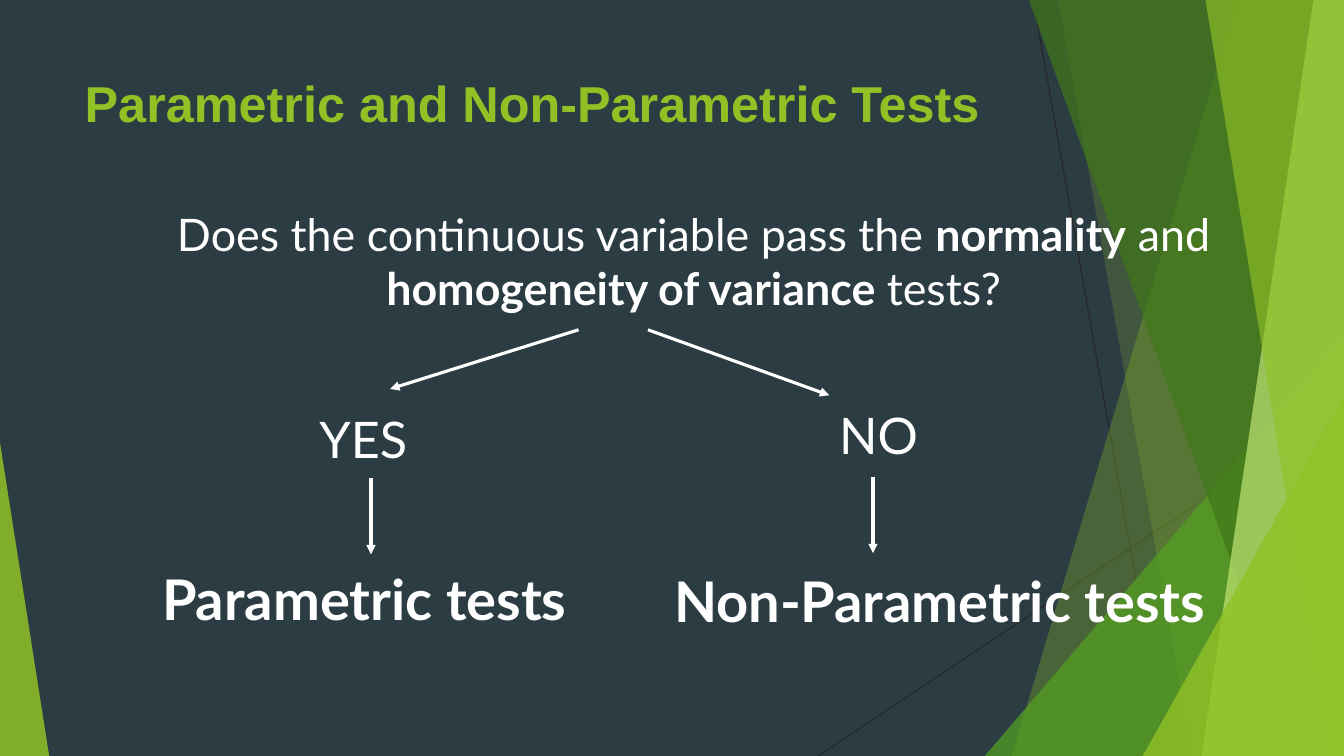
from lxml import etree
from pptx import Presentation
from pptx.dml.color import RGBColor
from pptx.enum.shapes import MSO_CONNECTOR, MSO_SHAPE
from pptx.enum.text import MSO_ANCHOR, MSO_AUTO_SIZE, PP_ALIGN
from pptx.oxml.ns import qn
from pptx.util import Cm, Pt

STRAIGHT = MSO_CONNECTOR.STRAIGHT
TRIANGLE = MSO_SHAPE.ISOSCELES_TRIANGLE
TOP = MSO_ANCHOR.TOP
NO_AUTOFIT, GROW = MSO_AUTO_SIZE.NONE, MSO_AUTO_SIZE.SHAPE_TO_FIT_TEXT
LEFT, CENTER = PP_ALIGN.LEFT, PP_ALIGN.CENTER

# All lengths are in centimetres.
WIDTH, HEIGHT = 33.87, 19.05
NIGHT, WHITE, LIME, HAIRLINE = "2C3C43", "FFFFFF", "90C226", "262626"

TITLE = "Parametric and Non-Parametric Tests"
TITLE_BOX = (1.88, 1.7, 23.88, 3.66)
QUESTION = [  # text, bold
    ("Does the continuous variable pass the ", False),
    ("normality", True),
    (" and ", False),
    ("homogeneity of variance ", True),
    ("tests?", False),
]
QUESTION_BOX = (2.34, 5.08, 30.28, 12.55)

ANSWERS = [  # text, box, size, bold
    ("YES", (7.8, 10.16, 3.07, 1.8), 36, False),
    ("NO", (20.9, 10.06, 3.07, 1.8), 36, False),
    ("Parametric tests", (3.84, 14.1, 11.46, 1.96), 40, True),
    ("Non-Parametric tests", (16.74, 14.15, 14.38, 1.96), 40, True),
]
ARROWS = [
    (14.58, 8.31, 9.83, 9.8),
    (16.33, 8.31, 20.9, 9.96),
    (9.35, 12.04, 9.35, 13.97),
    (22, 12.01, 22, 13.94),
]

HAIRLINES = [(26.04, 0, 29.41, HEIGHT), (WIDTH, 10.24, 20.62, HEIGHT)]
# Bands reach the right edge: (x at top, x at bottom, colour, opacity %).
# Corners fill the bottom right: (left, top, colour, opacity %).
BACK_BANDS = [(31.19, 25.5, LIME, 30), (26.67, 30.05, LIME, 20)]
BACK_CORNER = (24.82, 8.46, "54A021", 72)
FRONT_BANDS = [
    (25.93, 32.79, "3F7819", 70),
    (33.1, 30.28, "C0E474", 70),
    (30.38, 33.48, LIME, 65),
]
FRONT_CORNER = (28.8, 9.98, LIME, 80)
LEFT_WEDGE = (0, 11.15, 1.24, 7.9)


def rgb(hex_color):
    return RGBColor.from_string(hex_color)


def cm(lengths):
    return [Cm(length) for length in lengths]


def paint(shape, color, opacity):
    """Give a shape a translucent fill without line or shadow."""
    shape.shadow.inherit = False
    shape.line.fill.background()
    shape.fill.solid()
    shape.fill.fore_color.rgb = rgb(color)
    srgb = shape.element.spPr.find(qn("a:solidFill")).find(qn("a:srgbClr"))
    etree.SubElement(srgb, qn("a:alpha"), val=str(opacity * 1000))


def add_band(shapes, top_x, bottom_x, color, opacity):
    builder = shapes.build_freeform(Cm(top_x), 0)
    corners = [(WIDTH, 0), (WIDTH, HEIGHT), (bottom_x, HEIGHT)]
    builder.add_line_segments([cm(corner) for corner in corners], close=True)
    paint(builder.convert_to_shape(), color, opacity)


def add_wedge(shapes, box, apex, color, opacity):
    """Add a right triangle; apex is 0 for top left and 1 for top right."""
    wedge = shapes.add_shape(TRIANGLE, *cm(box))
    wedge.adjustments[0] = apex
    paint(wedge, color, opacity)


def add_corner(shapes, left, top, color, opacity):
    box = (left, top, WIDTH - left, HEIGHT - top)
    add_wedge(shapes, box, 1, color, opacity)


def add_line(shapes, ends, color, width, arrow=False):
    line = shapes.add_connector(STRAIGHT, *cm(ends))
    line.line.color.rgb = rgb(color)
    line.line.width = Pt(width)
    if arrow:
        etree.SubElement(line.line._get_or_add_ln(), qn("a:tailEnd"), type="triangle")
    etree.SubElement(line.element.spPr, qn("a:effectLst"))


def style(paragraph, font_name, size, color, align, bold=None):
    paragraph.alignment = align
    paragraph.font.name = font_name
    paragraph.font.size = Pt(size)
    paragraph.font.color.rgb = rgb(color)
    paragraph.font.bold = bold


def place(placeholder, box):
    """Move a placeholder in front of the decoration and anchor its text at the top."""
    placeholder.left, placeholder.top, placeholder.width, placeholder.height = cm(box)
    placeholder.text_frame.vertical_anchor = TOP
    placeholder.text_frame.auto_size = NO_AUTOFIT
    placeholder.element.getparent().append(placeholder.element)
    return placeholder.text_frame.paragraphs[0]


def add_decoration(shapes):
    for ends in HAIRLINES:
        add_line(shapes, ends, HAIRLINE, 0.75)
    for band in BACK_BANDS:
        add_band(shapes, *band)
    add_corner(shapes, *BACK_CORNER)
    for band in FRONT_BANDS:
        add_band(shapes, *band)
    add_corner(shapes, *FRONT_CORNER)
    add_wedge(shapes, LEFT_WEDGE, 0, LIME, 85)


def add_question(placeholder):
    question = place(placeholder, QUESTION_BOX)
    for text, bold in QUESTION:
        run = question.add_run()
        run.text = text
        run.font.bold = bold
    style(question, "Lato", 32, WHITE, CENTER)
    question.space_before = Pt(10)
    properties = question._p.get_or_add_pPr()
    properties.set("marL", "0")
    properties.set("indent", "0")
    properties.find(qn("a:spcBef")).addnext(properties.makeelement(qn("a:buNone")))


def main():
    deck = Presentation()
    deck.slide_width, deck.slide_height = cm((WIDTH, HEIGHT))
    slide = deck.slides.add_slide(deck.slide_layouts[1])
    slide.background.fill.solid()
    slide.background.fill.fore_color.rgb = rgb(NIGHT)
    shapes = slide.shapes

    add_decoration(shapes)
    title = place(shapes.title, TITLE_BOX)
    title.text = TITLE
    style(title, "Arial", 36, LIME, LEFT, bold=True)
    add_question(slide.placeholders[1])

    for ends in ARROWS:
        add_line(shapes, ends, WHITE, 2.25, arrow=True)
    for text, box, size, bold in ANSWERS:
        frame = shapes.add_textbox(*cm(box)).text_frame
        frame.word_wrap = True
        frame.auto_size = GROW
        frame.text = text
        style(frame.paragraphs[0], "Lato", size, WHITE, LEFT, bold)

    deck.save("out.pptx")


if __name__ == "__main__":
    main()
